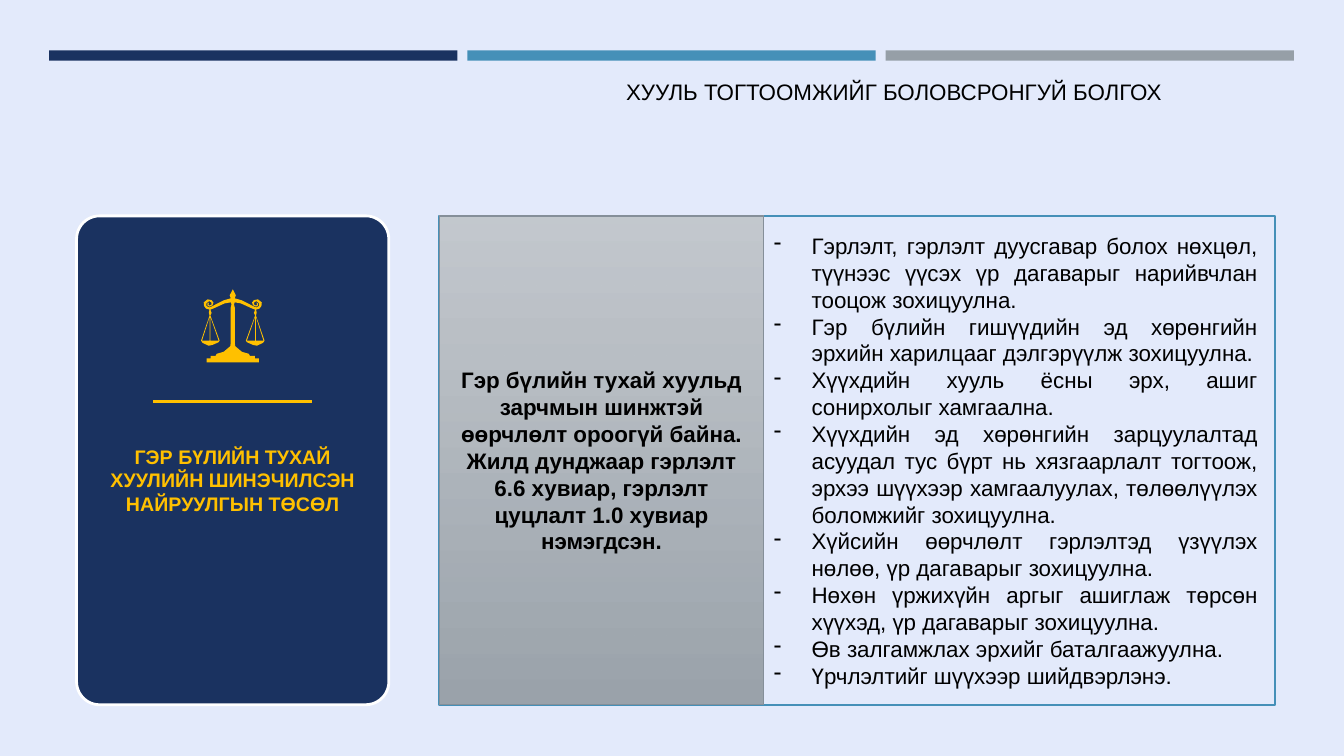
from lxml import etree
from pptx import Presentation
from pptx import util as u
from pptx.dml.color import RGBColor
from pptx.enum import shapes, text
from pptx.oxml import ns

Cm, Pt = u.Cm, u.Pt
NAVY = RGBColor(0x1A, 0x32, 0x60)
BLUE = RGBColor(0x45, 0x90, 0xB8)
GREY = RGBColor(0x96, 0x9F, 0xA7)
GOLD = RGBColor(0xFF, 0xC0, 0x00)
WHITE = RGBColor(0xFF, 0xFF, 0xFF)
BLACK = RGBColor(0x00, 0x00, 0x00)
PALE = RGBColor(0xE3, 0xEA, 0xFB)
PANEL_TOP = RGBColor(0xC0, 0xC5, 0xC9)
PANEL_BOTTOM = RGBColor(0x9B, 0xA3, 0xAB)
PANEL_EDGE = RGBColor(0x85, 0x8F, 0x99)

TITLE = "ХУУЛЬ ТОГТООМЖИЙГ БОЛОВСРОНГУЙ БОЛГОХ"
CARD_TEXT = "ГЭР БҮЛИЙН ТУХАЙ ХУУЛИЙН ШИНЭЧИЛСЭН НАЙРУУЛГЫН ТӨСӨЛ"
PANEL_TEXT = [
    "Гэр бүлийн тухай хуульд зарчмын шинжтэй өөрчлөлт ороогүй байна.",
    "Жилд дунджаар гэрлэлт 6.6 хувиар, гэрлэлт цуцлалт 1.0 хувиар нэмэгдсэн.",
]
MEASURES = [
    "Гэрлэлт, гэрлэлт дуусгавар болох нөхцөл, түүнээс үүсэх үр дагаварыг нарийвчлан тооцож зохицуулна.",
    "Гэр бүлийн гишүүдийн эд хөрөнгийн эрхийн харилцааг дэлгэрүүлж зохицуулна.",
    "Хүүхдийн хууль ёсны эрх, ашиг сонирхолыг хамгаална.",
    "Хүүхдийн эд хөрөнгийн зарцуулалтад асуудал тус бүрт нь хязгаарлалт тогтоож, "
    "эрхээ шүүхээр хамгаалуулах, төлөөлүүлэх боломжийг зохицуулна.",
    "Хүйсийн өөрчлөлт гэрлэлтэд үзүүлэх нөлөө, үр дагаварыг зохицуулна.",
    "Нөхөн үржихүйн аргыг ашиглаж төрсөн хүүхэд, үр дагаварыг зохицуулна.",
    "Өв залгамжлах эрхийг баталгаажуулна.",
    "Үрчлэлтийг шүүхээр шийдвэрлэнэ.",
]


def add_block(kind, left, top, width, height, line=None, weight=1):
    block = page.shapes.add_shape(kind, Cm(left), Cm(top), Cm(width), Cm(height))
    block.shadow.inherit = False
    if line is None:
        block.line.fill.background()
    else:
        block.line.color.rgb = line
        block.line.width = Pt(weight)
    return block


def write(box, lines, size, color, bold=False, align=text.PP_ALIGN.CENTER,
          anchor=text.MSO_ANCHOR.MIDDLE):
    frame = box.text_frame
    frame.word_wrap = True
    frame.auto_size = text.MSO_AUTO_SIZE.NONE
    frame.vertical_anchor = anchor
    for index, line in enumerate(lines):
        para = frame.add_paragraph() if index else frame.paragraphs[0]
        para.alignment = align
        para.space_before = Pt(0)
        span = para.add_run()
        span.text = line
        span.font.name = "Arial"
        span.font.size = Pt(size)
        span.font.bold = bold
        span.font.color.rgb = color


deck = Presentation()
deck.slide_width, deck.slide_height = Cm(33.87), Cm(19.05)
page = deck.slides.add_slide(deck.slide_layouts[1])
page.background.fill.solid()
page.background.fill.fore_color.rgb = PALE
RECT = shapes.MSO_SHAPE.RECTANGLE

# Title and list of measures
title = page.shapes.title
title.left, title.top, title.width, title.height = Cm(8.51), Cm(1.85), Cm(28.04), Cm(0.94)
write(title, [TITLE], 16, BLACK)

measures = page.placeholders[1]
measures.left, measures.top = Cm(19.25), Cm(5.72)
measures.width, measures.height = Cm(12.7), Cm(12.65)
write(measures, MEASURES, 16, BLACK, align=text.PP_ALIGN.JUSTIFY, anchor=text.MSO_ANCHOR.TOP)
for para in measures.text_frame.paragraphs:
    props = para._p.get_or_add_pPr()
    props.set("marL", str(Cm(0.95)))
    props.set("indent", str(-Cm(0.95)))
    etree.SubElement(props, ns.qn("a:buFontTx"))
    etree.SubElement(props, ns.qn("a:buChar")).set("char", "-")

# Top bars
for column, color in enumerate([NAVY, BLUE, GREY]):
    bar = add_block(RECT, 1.24 + column * 10.54, 1.27, 10.29, 0.26)
    bar.fill.solid()
    bar.fill.fore_color.rgb = color

# Bill card
card = add_block(shapes.MSO_SHAPE.ROUNDED_RECTANGLE, 1.93, 5.44, 7.87, 12.32, WHITE, 2)
card.adjustments[0] = 0.074
card.fill.solid()
card.fill.fore_color.rgb = NAVY
card.text_frame.margin_top = Cm(1.12)
write(card, [CARD_TEXT], 14, GOLD, bold=True)

# Scales of justice: (distance from axis, depth) in thousandths of an inch
AXIS, SCALES_TOP = 2310, 2870
HALF = [
    (0, 0), (30, 60), (20, 90), (90, 110), (150, 140), (210, 172), (235, 180),
    (262, 165), (262, 140), (235, 118), (212, 130), (210, 150), (230, 162),
    (242, 150), (235, 132), (252, 142), (252, 160), (232, 172), (200, 158),
    (192, 130), (210, 108), (250, 100), (288, 130), (285, 165), (265, 192),
    (230, 202), (238, 230), (230, 260), (315, 510), (300, 532), (240, 560),
    (200, 552), (140, 525), (130, 510), (222, 260), (210, 235), (222, 202),
    (190, 190), (80, 140), (20, 130), (12, 150), (20, 180), (20, 530),
    (25, 565), (90, 620), (160, 640), (170, 660), (220, 660), (220, 685),
    (260, 685), (260, 725),
]
OPENINGS = [
    [(230, 275), (305, 510), (230, 510)],
    [(222, 275), (222, 510), (140, 510)],
]
left_half = [(AXIS - away, SCALES_TOP + down) for away, down in HALF]
right_half = [(AXIS + away, SCALES_TOP + down) for away, down in reversed(HALF[1:])]
builder = page.shapes.build_freeform(*left_half[0], scale=Cm(2.54) / 1000)
builder.add_line_segments(left_half[1:] + right_half)
for side in (-1, 1):
    for opening in OPENINGS:
        corners = [(AXIS + side * away, SCALES_TOP + down) for away, down in opening]
        builder.move_to(*corners[0])
        builder.add_line_segments(corners[1:])
scales = builder.convert_to_shape()
scales.shadow.inherit = False
scales.fill.solid()
scales.fill.fore_color.rgb = GOLD
scales.line.fill.background()

divider = page.shapes.add_connector(
    shapes.MSO_CONNECTOR.STRAIGHT, Cm(3.86), Cm(10.11), Cm(7.87), Cm(10.11))
divider.line.color.rgb = GOLD
divider.line.width = Pt(2.25)
etree.SubElement(divider._element.spPr, ns.qn("a:effectLst"))

# Frame around the measures, with the grey panel on its left
border = add_block(shapes.MSO_SHAPE.SNIP_2_DIAG_RECTANGLE, 11.07, 5.44, 21.06, 12.32, BLUE, 1.5)
border.adjustments[0] = border.adjustments[1] = 0
border.fill.background()

panel = add_block(RECT, 11.07, 5.44, 8.18, 12.32, PANEL_EDGE)
panel.fill.gradient()
panel.fill.gradient_angle = 270
for stop, color, position in zip(panel.fill.gradient_stops, [PANEL_TOP, PANEL_BOTTOM], [0, 1]):
    stop.color.rgb = color
    stop.position = position
top_color = next(panel._element.iter(ns.qn("a:srgbClr")))
etree.SubElement(top_color, ns.qn("a:alpha")).set("val", "90000")
panel.text_frame.margin_left = panel.text_frame.margin_right = Cm(0.35)
write(panel, PANEL_TEXT, 16, BLACK, bold=True)

deck.save("out.pptx")
